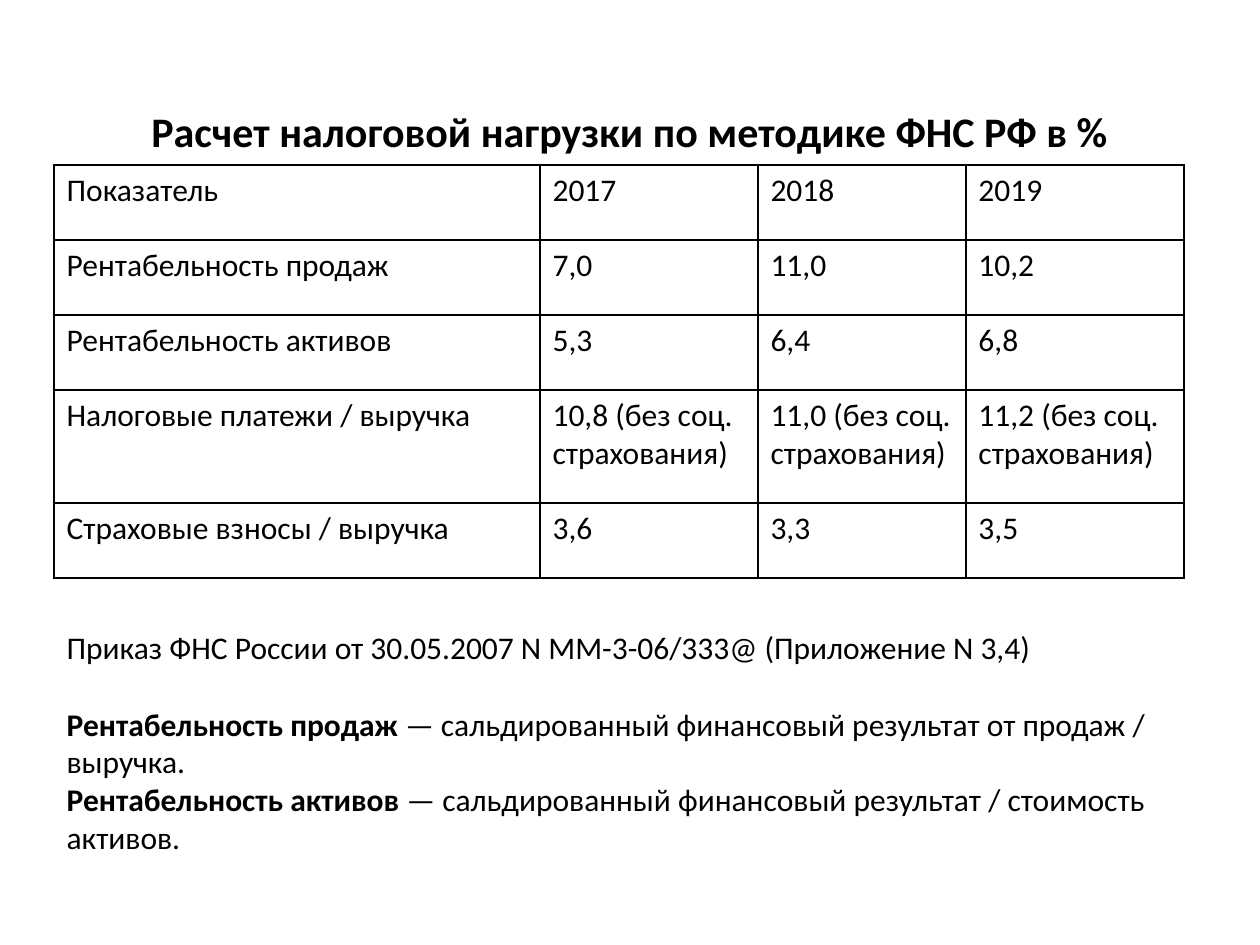
from dataclasses import dataclass

from lxml.etree import SubElement
from pptx import Presentation
from pptx.dml.color import RGBColor as Rgb
from pptx.enum.text import MSO_ANCHOR as Anchor, MSO_AUTO_SIZE as Fit, PP_ALIGN as Align
from pptx.oxml.ns import qn
from pptx.util import Inches, Pt

PX = Inches(1) // 126


@dataclass(frozen=True)
class Theme:
    font: str = "Calibri"
    ink: str = "000000"
    paper: str = "FFFFFF"
    head: int = 24
    body: int = 18
    gap: int = 22
    rule: int = 1


THEME = Theme()

TITLE = "Расчет налоговой нагрузки по методике ФНС РФ в %"
ROWS = [
    ("Показатель", "2017", "2018", "2019"),
    ("Рентабельность продаж", "7,0", "11,0", "10,2"),
    ("Рентабельность активов", "5,3", "6,4", "6,8"),
    ("Налоговые платежи / выручка",
     *(f"{rate} (без соц. страхования)" for rate in ("10,8", "11,0", "11,2"))),
    ("Страховые взносы / выручка", "3,6", "3,3", "3,5"),
]
WIDTHS = (486, 218, 208, 218)
HEIGHTS = (75, 75, 75, 113, 75)
ORDER = "Приказ ФНС России от 30.05.2007 N ММ-3-06/333@ (Приложение N 3,4)"
TERMS = [
    ("Рентабельность продаж ", "— сальдированный финансовый результат от продаж / выручка."),
    ("Рентабельность активов ", "— сальдированный финансовый результат / стоимость активов."),
]


def style(run, size, bold=False):
    font = run.font
    font.name, font.size, font.bold = THEME.font, Pt(size), bold
    font.color.rgb = Rgb.from_string(THEME.ink)


def place(shape, box):
    shape.left, shape.top, shape.width, shape.height = (n * PX for n in box)
    frame = shape.text_frame
    frame.word_wrap = True
    frame.auto_size = Fit.NONE
    return frame


def add_title(slide, box):
    frame = place(slide.shapes.title, box)
    frame.text = TITLE
    frame.vertical_anchor = Anchor.MIDDLE
    para = frame.paragraphs[0]
    para.alignment = Align.CENTER
    style(para.runs[0], THEME.head, True)


def add_rules(cell):
    props = cell._tc.get_or_add_tcPr()
    for side in ("lnL", "lnR", "lnT", "lnB"):
        line = SubElement(props, qn(f"a:{side}"), w=str(Pt(THEME.rule)))
        fill = SubElement(line, qn("a:solidFill"))
        SubElement(fill, qn("a:srgbClr"), val=THEME.ink)


def add_grid(slide, box):
    frame = slide.shapes.add_table(len(ROWS), len(WIDTHS), *(n * PX for n in box))
    table = frame.table
    table.first_row = table.horz_banding = False
    for col, width in zip(table.columns, WIDTHS):
        col.width = width * PX
    for row, height, texts in zip(table.rows, HEIGHTS, ROWS):
        row.height = height * PX
        for cell, text in zip(row.cells, texts):
            cell.text_frame.text = text
            style(cell.text_frame.paragraphs[0].runs[0], THEME.body)
            add_rules(cell)
            cell.fill.background()


def add_notes(slide, box):
    frame = place(slide.placeholders[1], box)
    frame.text = "\n".join([ORDER] + [term for term, _ in TERMS])
    first, *rest = frame.paragraphs
    style(first.runs[0], THEME.body)
    for para, (_, text) in zip(rest, TERMS):
        style(para.runs[0], THEME.body, True)
        run = para.add_run()
        run.text = text
        style(run, THEME.body)
    for para in frame.paragraphs:
        para.space_before = para.space_after = Pt(0)
        props = para._p.get_or_add_pPr()
        props.set("marL", "0")
        props.set("indent", "0")
        SubElement(props, qn("a:buNone"))
    first.space_after = Pt(THEME.gap)


def main():
    deck = Presentation()
    deck.slide_width, deck.slide_height = 1260 * PX, 945 * PX
    slide = deck.slides.add_slide(deck.slide_layouts[1])
    back = slide.background.fill
    back.solid()
    back.fore_color.rgb = Rgb.from_string(THEME.paper)
    add_title(slide, (44, 99, 1171, 64))
    add_grid(slide, (54, 165, sum(WIDTHS), sum(HEIGHTS)))
    add_notes(slide, (54, 622, 1142, 242))
    deck.save("out.pptx")


if __name__ == "__main__":
    main()
